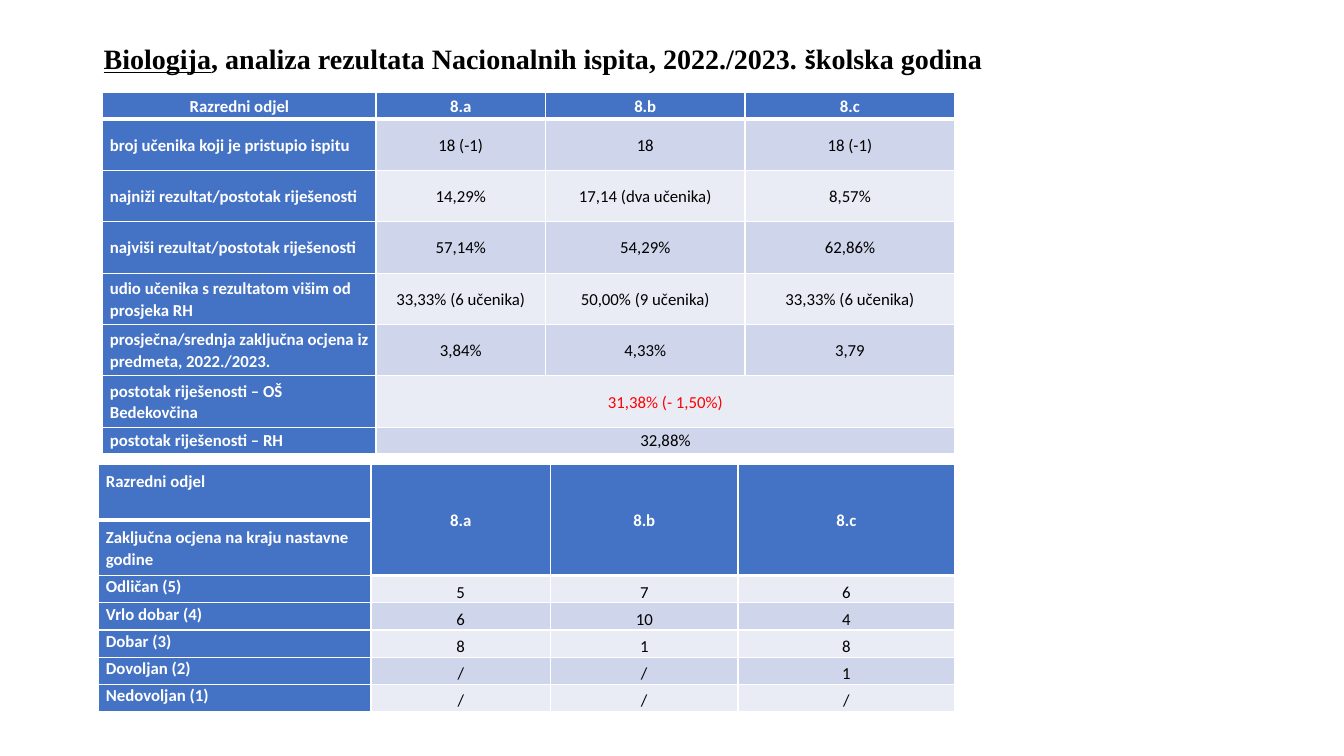
from lxml import etree
from pptx import Presentation
from pptx.dml.color import RGBColor
from pptx.enum.text import MSO_ANCHOR, PP_ALIGN
from pptx.oxml.ns import qn
from pptx.util import Inches, Pt

TOP, MIDDLE, BOTTOM = MSO_ANCHOR.TOP, MSO_ANCHOR.MIDDLE, MSO_ANCHOR.BOTTOM
LEFT, CENTER = PP_ALIGN.LEFT, PP_ALIGN.CENTER

COLORS = {
    "head": "4472C4",
    "dark": "CFD5EA",
    "light": "E9EBF5",
    "white": "FFFFFF",
    "black": "000000",
    "red": "FF0000",
}

RESULTS = [
    ["Razredni odjel", "8.a", "8.b", "8.c"],
    ["broj učenika koji je pristupio ispitu", "18 (-1)", "18", "18 (-1)"],
    ["najniži rezultat/postotak riješenosti", "14,29%", "17,14 (dva učenika)", "8,57%"],
    ["najviši rezultat/postotak riješenosti", "57,14%", "54,29%", "62,86%"],
    ["udio učenika s rezultatom višim od prosjeka RH",
     "33,33% (6 učenika)", "50,00% (9 učenika)", "33,33% (6 učenika)"],
    ["prosječna/srednja zaključna ocjena iz predmeta, 2022./2023.",
     "3,84%", "4,33%", "3,79"],
    ["postotak riješenosti – OŠ Bedekovčina", "31,38% (- 1,50%)", None, None],
    ["postotak riješenosti – RH", "32,88%", None, None],
]

GRADES = [
    ["Razredni odjel", "8.a", "8.b", "8.c"],
    ["Zaključna ocjena na kraju nastavne godine", None, None, None],
    ["Odličan (5)", "5", "7", "6"],
    ["Vrlo dobar (4)", "6", "10", "4"],
    ["Dobar (3)", "8", "1", "8"],
    ["Dovoljan (2)", "/", "/", "1"],
    ["Nedovoljan (1)", "/", "/", "/"],
]


class Board:
    serif = "Times New Roman"
    sans = "Calibri"

    def __init__(self, slide):
        self.slide = slide

    def color(self, name):
        return RGBColor.from_string(COLORS[name])

    def style(self, font, face, size, color, bold):
        font.name = face
        font.size = Pt(size)
        font.bold = bold
        font.color.rgb = self.color(color)

    def title(self, x, y, w, h, parts):
        frame = self.slide.shapes.add_textbox(
            Inches(x), Inches(y), Inches(w), Inches(h)).text_frame
        frame.word_wrap = True
        frame.vertical_anchor = TOP
        frame.margin_top = Inches(0.07)
        para = frame.paragraphs[0]
        for text, face, under in parts:
            run = para.add_run()
            run.text = text
            self.style(run.font, face, 20, "black", True)
            run.font.underline = under

    def border(self, cell, upper, lower):
        props = cell._tc.get_or_add_tcPr()
        for side, width in (("L", 1), ("R", 1), ("T", upper), ("B", lower)):
            line = etree.SubElement(props, qn("a:ln" + side), w=str(Pt(width)))
            fill = etree.SubElement(line, qn("a:solidFill"))
            etree.SubElement(fill, qn("a:srgbClr"), val=COLORS["white"])

    def cell(self, cell, text, fill, color, align, anchor):
        cell.fill.solid()
        cell.fill.fore_color.rgb = self.color(fill)
        cell.margin_left = cell.margin_right = Inches(0.07)
        cell.margin_top = cell.margin_bottom = 0
        cell.vertical_anchor = anchor
        if text is None:
            return
        para = cell.text_frame.paragraphs[0]
        para.text = text
        para.alignment = align
        para.line_spacing = 1.07
        self.style(para.font, self.sans, 12, color, fill == "head")

    def table(self, x, y, cols, rows, data, heads=1, spread=False):
        table = self.slide.shapes.add_table(
            len(rows), len(cols), Inches(x), Inches(y),
            Inches(sum(cols)), Inches(sum(rows))).table
        table.first_row = table.horz_banding = False
        for col, width in zip(table.columns, cols):
            col.width = Inches(width)
        for row, height in zip(table.rows, rows):
            row.height = Inches(height)
        for r, texts in enumerate(data):
            for c, text in enumerate(texts):
                cell = table.cell(r, c)
                last = heads - 1 if c else 0
                self.border(cell, 3 if r == last + 1 else 1, 3 if r <= last else 1)
                head = c == 0 or r < heads
                fill = "head" if head else "dark" if r % 2 else "light"
                color = "white" if head else "red" if text and "(- " in text else "black"
                align = CENTER if c or (r == 0 and heads == 1) else LEFT
                anchor = MIDDLE
                if spread and r >= heads:
                    anchor = BOTTOM if c else TOP
                self.cell(cell, text, fill, color, align, anchor)
        return table


def main():
    deck = Presentation()
    deck.slide_width, deck.slide_height = Inches(13.33), Inches(7.5)
    board = Board(deck.slides.add_slide(deck.slide_layouts[6]))

    results = board.table(1.02, 0.92, [2.71, 1.68, 1.98, 2.08],
                          [0.26] + [0.51] * 6 + [0.26], RESULTS)
    for r in (6, 7):
        results.cell(r, 1).merge(results.cell(r, 3))

    grades = board.table(0.98, 4.61, [2.7, 1.78, 1.86, 2.15],
                         [0.55] * 2 + [0.27] * 5, GRADES, heads=2, spread=True)
    for c in (1, 2, 3):
        grades.cell(0, c).merge(grades.cell(1, c))
    grades.cell(0, 0).margin_bottom = Inches(0.22)

    board.title(0.93, 0.34, 9.77, 0.74, [
        ("Biologija", board.serif, True),
        (", analiza rezultata Nacionalnih ispita, 2022./2023. ", board.serif, False),
        ("š", board.sans, False),
        ("kolska godina", board.serif, False),
    ])
    deck.save("out.pptx")


if __name__ == "__main__":
    main()
